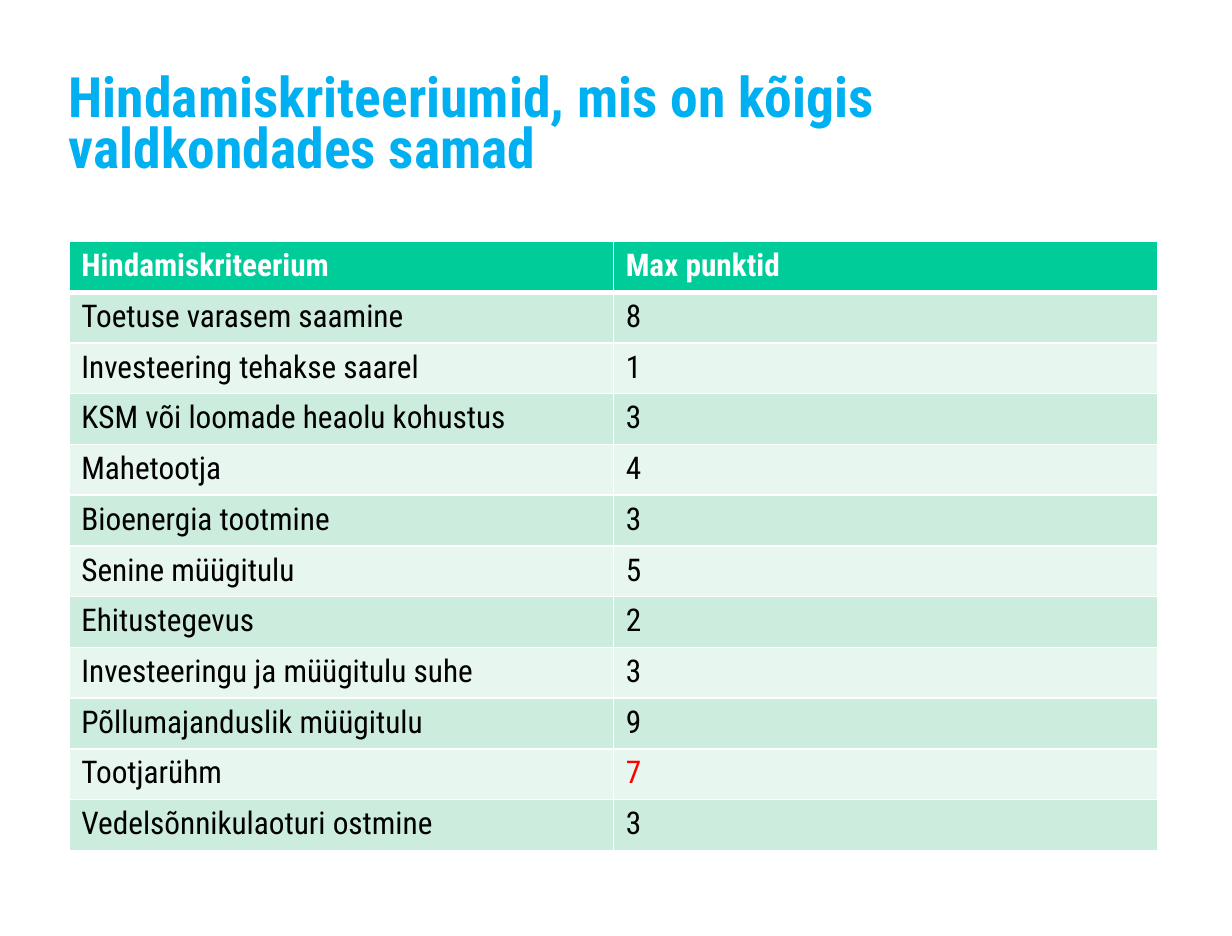
"""Builds a slide with a table of scoring criteria shared by all fields."""
from lxml import etree
from pptx import Presentation
from pptx import util as u
from pptx.dml.color import RGBColor
from pptx.enum import text
from pptx.oxml import ns

TITLE = "Hindamiskriteeriumid, mis on kõigis valdkondades samad"
HEADER = ("Hindamiskriteerium", "Max punktid")
CRITERIA = [
    ("Toetuse varasem saamine", 8),
    ("Investeering tehakse saarel", 1),
    ("KSM või loomade heaolu kohustus", 3),
    ("Mahetootja", 4),
    ("Bioenergia tootmine", 3),
    ("Senine müügitulu", 5),
    ("Ehitustegevus", 2),
    ("Investeeringu ja müügitulu suhe", 3),
    ("Põllumajanduslik müügitulu", 9),
    ("Tootjarühm", 7),
    ("Vedelsõnnikulaoturi ostmine", 3),
]
HIGHLIGHT = ("Tootjarühm", 7)

FONT = "Roboto Condensed"
BLUE = RGBColor(0x00, 0xB0, 0xF0)
GREEN = RGBColor(0x00, 0xCC, 0x99)
BANDS = (RGBColor(0xE7, 0xF6, 0xEF), RGBColor(0xCC, 0xEC, 0xDE))
WHITE = RGBColor(0xFF, 0xFF, 0xFF)
BLACK = RGBColor(0x00, 0x00, 0x00)
RED = RGBColor(0xFF, 0x00, 0x00)

WIDTH, HEIGHT = u.Cm(25), u.Cm(19)
MARGIN = u.Inches(0.55)
CONTENT_WIDTH = u.Inches(8.7)
TITLE_TOP, TITLE_HEIGHT = u.Inches(0.33), u.Inches(1.38)
TABLE_TOP, TABLE_HEIGHT = u.Inches(1.93), u.Inches(4.87)
CELL_PADDING = u.Inches(0.02)
HEADER_BORDERS = {"lnL": 1, "lnR": 1, "lnT": 1, "lnB": 3}


def style(frame, size, color, bold, spacing):
    paragraph = frame.paragraphs[0]
    paragraph.alignment = text.PP_ALIGN.LEFT
    paragraph.line_spacing = spacing
    font = paragraph.runs[0].font
    font.name, font.size, font.bold = FONT, u.Pt(size), bold
    font.color.rgb = color


def add_borders(cell, widths):
    properties = cell._tc.get_or_add_tcPr()
    for position, (side, points) in enumerate(widths.items()):
        border = etree.Element(ns.qn(f"a:{side}"), w=str(u.Pt(points)))
        fill = etree.SubElement(border, ns.qn("a:solidFill"))
        etree.SubElement(fill, ns.qn("a:srgbClr"), val=str(WHITE))
        properties.insert(position, border)


def add_title(slide):
    title = slide.shapes.title
    title.left, title.top = MARGIN, TITLE_TOP
    title.width, title.height = CONTENT_WIDTH, TITLE_HEIGHT
    frame = title.text_frame
    frame.text = TITLE
    frame.word_wrap = True
    frame.auto_size = text.MSO_AUTO_SIZE.NONE
    frame.vertical_anchor = text.MSO_ANCHOR.MIDDLE
    frame.margin_left = frame.margin_right = 0
    frame.margin_top = frame.margin_bottom = 0
    style(frame, 32, BLUE, True, 0.77)


def add_criteria(slide):
    entries = [HEADER, *CRITERIA]
    criteria = slide.shapes.add_table(
        len(entries), len(HEADER), MARGIN, TABLE_TOP, CONTENT_WIDTH, TABLE_HEIGHT
    ).table
    for row, entry in enumerate(entries):
        for column, value in enumerate(entry):
            cell = criteria.cell(row, column)
            cell.text = str(value)
            cell.margin_top = cell.margin_bottom = CELL_PADDING
            cell.fill.solid()
            cell.fill.fore_color.rgb = BANDS[row % 2] if row else GREEN
            color = BLACK if row else WHITE
            if entry == HIGHLIGHT and column == 1:
                color = RED
            style(cell.text_frame, 18, color, row == 0, 1.1)
            if row == 0:
                add_borders(cell, HEADER_BORDERS)


def main():
    deck = Presentation()
    deck.slide_width, deck.slide_height = WIDTH, HEIGHT
    slide = deck.slides.add_slide(deck.slide_layouts.get_by_name("Title Only"))
    add_title(slide)
    add_criteria(slide)
    deck.save("out.pptx")


if __name__ == "__main__":
    main()
